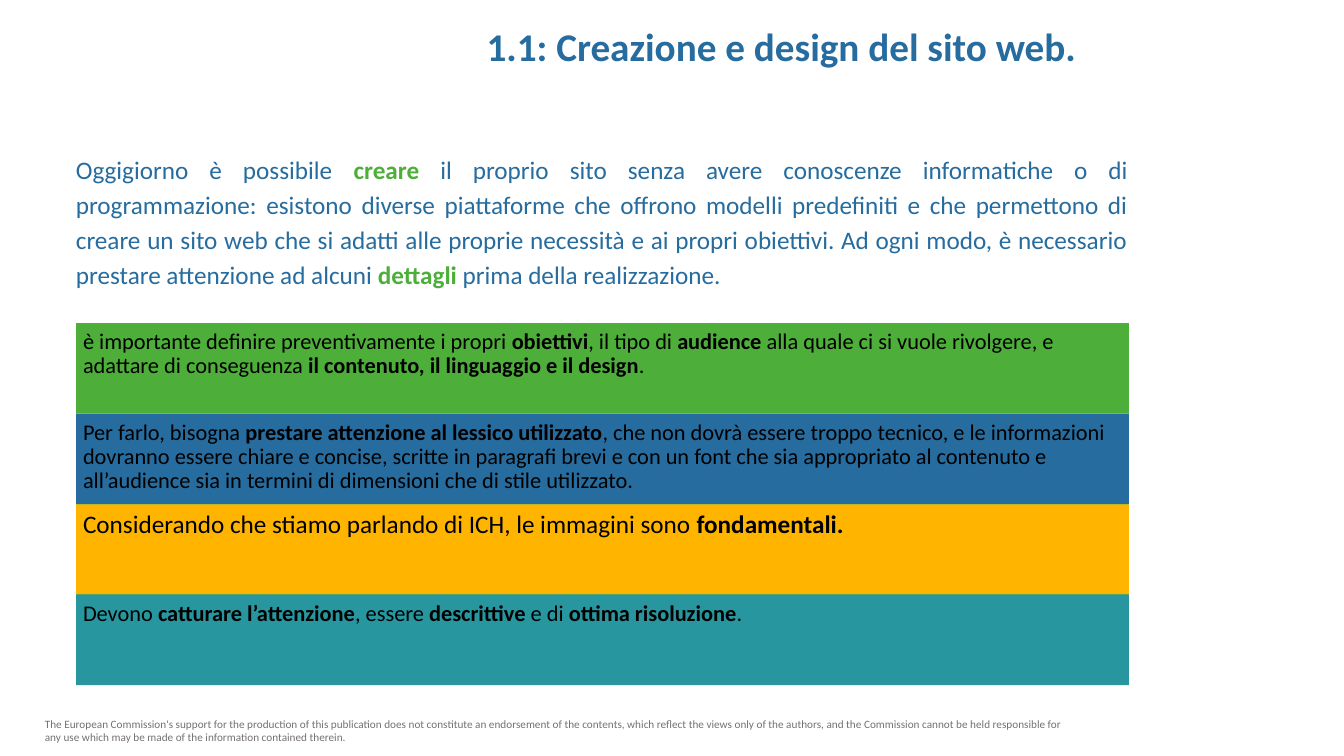
from lxml import etree
from pptx import Presentation
from pptx import util as u
from pptx.dml.color import RGBColor
from pptx.enum import shapes, text
from pptx.oxml.ns import qn

COLORS = {
    "blue": "266C9F", "green": "4EAE3A", "amber": "FFB500", "teal": "27969F",
    "black": "000000", "grey": "767171",
    "rule_blue": "5B9BD5", "rule_mint": "52CAB8",
    "rule_green": "49BF64", "rule_olive": "70AD47",
}

TITLE = "1.1: Creazione e design del sito web."
# Words between double asterisks are bold
INTRO = (
    "Oggigiorno è possibile **creare** il proprio sito senza avere conoscenze "
    "informatiche o di programmazione: esistono diverse piattaforme che offrono "
    "modelli predefiniti e che permettono di creare un sito web che si adatti alle "
    "proprie necessità e ai propri obiettivi. Ad ogni modo, è necessario prestare "
    "attenzione ad alcuni **dettagli** prima della realizzazione."
)
# Advice: fill, rule above, text size, wording
ADVICE = [
    ("green", "rule_blue", 16,
     "è importante definire preventivamente i propri **obiettivi**, il tipo di "
     "**audience** alla quale ci si vuole rivolgere, e adattare di conseguenza "
     "**il contenuto, il linguaggio e il design**."),
    ("blue", "rule_mint", 16,
     "Per farlo, bisogna **prestare attenzione al lessico utilizzato**, che non dovrà "
     "essere troppo tecnico, e le informazioni dovranno essere chiare e concise, "
     "scritte in paragrafi brevi e con un font che sia appropriato al contenuto e "
     "all’audience sia in termini di dimensioni che di stile utilizzato."),
    ("amber", "rule_green", 18,
     "Considerando che stiamo parlando di ICH, le immagini sono **fondamentali.**"),
    ("teal", "rule_olive", 16,
     "Devono **catturare l’attenzione**, essere **descrittive** e di "
     "**ottima risoluzione**."),
]
DISCLAIMER = (
    "The European Commission's support for the production of this publication does "
    "not constitute an endorsement of the contents, which reflect the views only of "
    "the authors, and the Commission cannot be held responsible for any use which "
    "may be made of the information contained therein."
)


def rgb(name):
    return RGBColor.from_string(COLORS[name])


def write(frame, wording, size, color, strong=None, bold=False, spacing=1.0,
          align=text.PP_ALIGN.LEFT, insets=(7.2, 3.6)):
    """Fill a text frame with one paragraph, making the marked words bold."""
    frame.word_wrap = True
    frame.auto_size = text.MSO_AUTO_SIZE.NONE
    frame.vertical_anchor = text.MSO_ANCHOR.TOP
    frame.margin_left = frame.margin_right = u.Pt(insets[0])
    frame.margin_top = frame.margin_bottom = u.Pt(insets[1])
    paragraph = frame.paragraphs[0]
    properties = paragraph._p.get_or_add_pPr()
    properties.set("marL", "0")
    properties.set("indent", "0")
    etree.SubElement(properties, qn("a:buNone"))
    paragraph.alignment = align
    paragraph.line_spacing = spacing
    paragraph.space_before = u.Pt(0)
    for index, part in enumerate(wording.split("**")):
        if not part:
            continue
        marked = index % 2 == 1
        run = paragraph.add_run()
        run.text = part
        run.font.name = "Calibri"
        run.font.size = u.Pt(size)
        run.font.bold = bold or marked
        run.font.color.rgb = rgb(strong if marked and strong else color)


class SlideBuilder:
    def __init__(self, slide):
        self.slide = slide

    def placeholder(self, holder, box, wording, **style):
        holder.left, holder.top, holder.width, holder.height = map(u.Pt, box)
        write(holder.text_frame, wording, **style)

    def label(self, box, wording, **style):
        label = self.slide.shapes.add_textbox(*map(u.Pt, box))
        write(label.text_frame, wording, **style)

    def rule(self, left, top, width, color):
        rule = self.slide.shapes.add_connector(
            shapes.MSO_CONNECTOR.STRAIGHT, *map(u.Pt, (left, top, left + width, top)))
        rule.line.color.rgb = rgb(color)
        rule.line.width = u.Pt(1)
        etree.SubElement(rule._element.spPr, qn("a:effectLst"))

    def band(self, box, fill, wording, **style):
        band = self.slide.shapes.add_shape(
            shapes.MSO_SHAPE.RECTANGLE, *map(u.Pt, box))
        band.shadow.inherit = False
        band.fill.solid()
        band.fill.fore_color.rgb = rgb(fill)
        band.line.fill.background()
        write(band.text_frame, wording, **style)


def main():
    deck = Presentation()
    deck.slide_width, deck.slide_height = u.Pt(960), u.Pt(540)
    slide = deck.slides.add_slide(deck.slide_layouts[1])
    builder = SlideBuilder(slide)

    # Disclaimer at the foot
    builder.label((25, 508.5, 753, 26.5), DISCLAIMER, size=8, color="grey")

    # Title and introduction
    builder.placeholder(slide.shapes.title, (175, 7.5, 766, 57), TITLE, size=28,
                        color="blue", bold=True, spacing=1.15,
                        align=text.PP_ALIGN.CENTER)
    builder.placeholder(slide.placeholders[1], (47, 103.7, 766, 106), INTRO, size=18,
                        color="blue", strong="green", spacing=1.15,
                        align=text.PP_ALIGN.JUSTIFY)

    # Stacked advice bands
    left, top, width, height = 54.3, 231, 752, 64.6
    for row, (fill, rule, size, wording) in enumerate(ADVICE):
        y = top + row * height
        builder.rule(left, y, width, rule)
        builder.band((left, y, width, height), fill, wording, size=size,
                     color="black", spacing=0.9, insets=(5, 5))

    deck.save("out.pptx")


if __name__ == "__main__":
    main()
